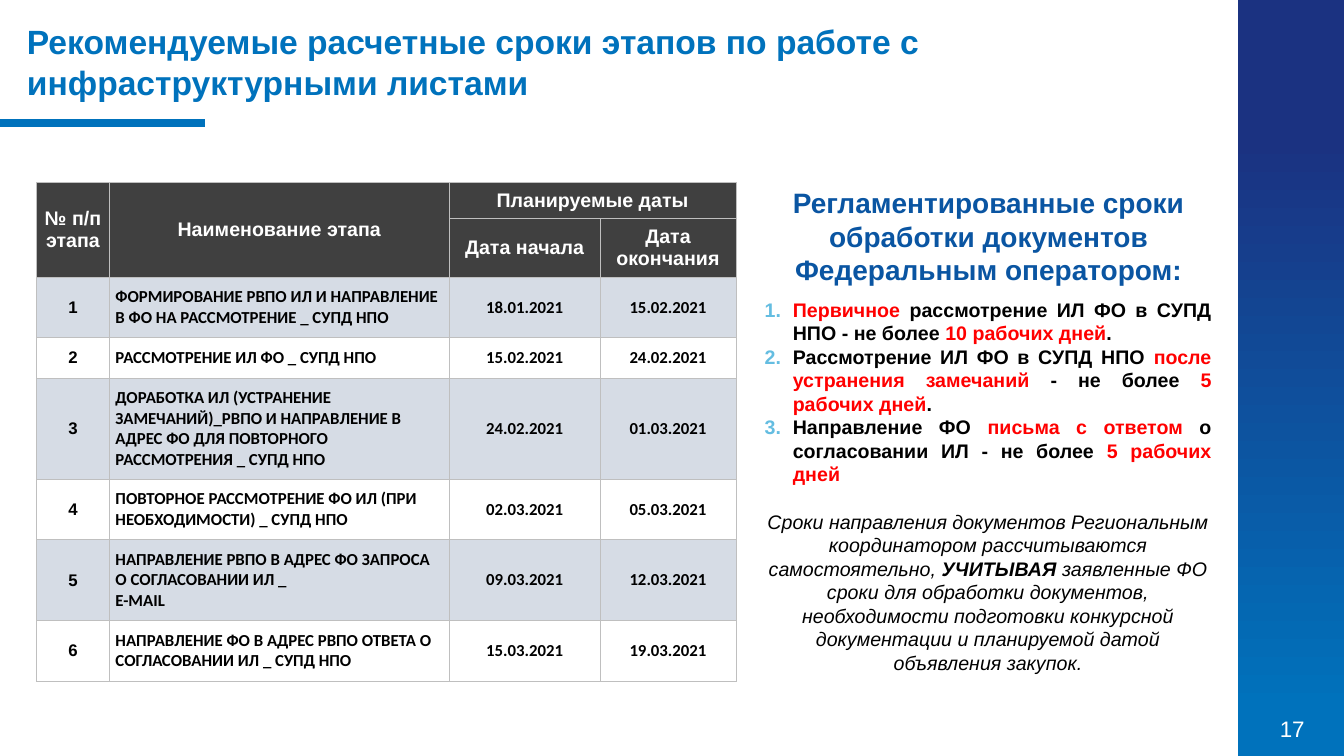
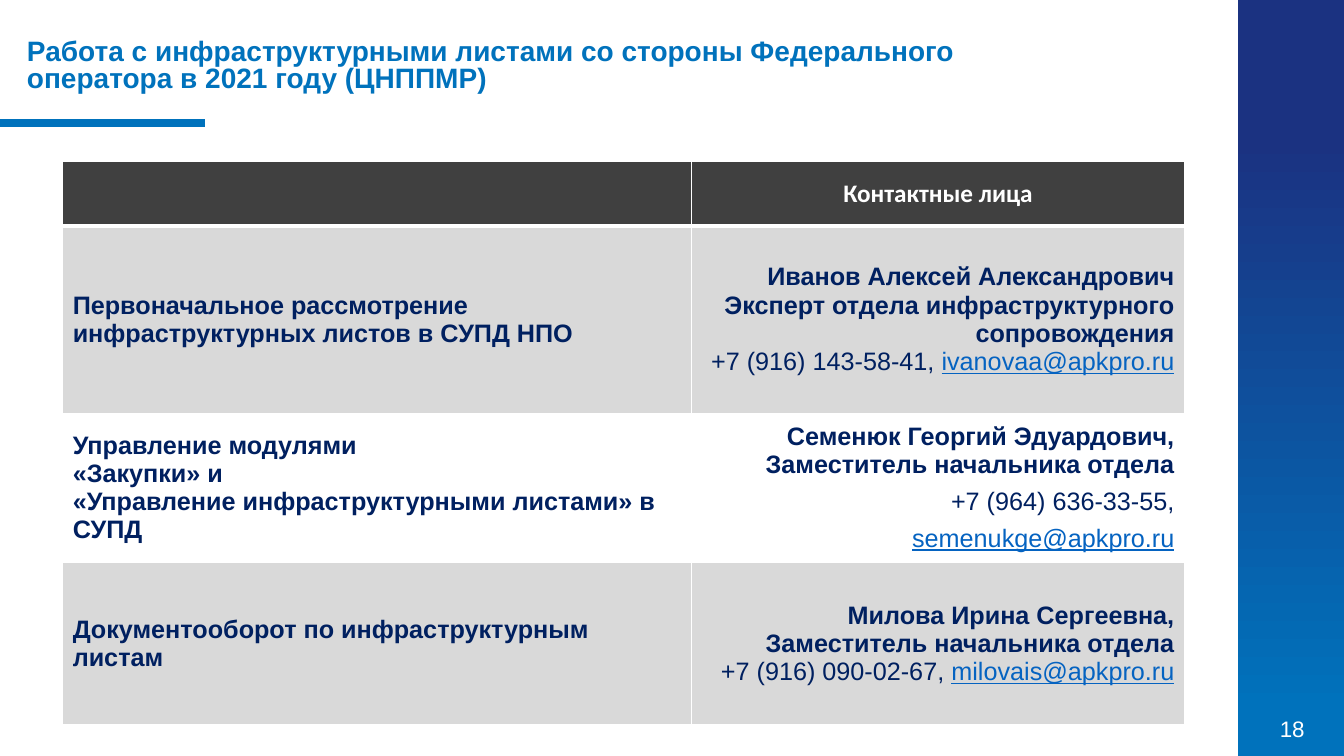
from lxml.etree import SubElement
from pptx import Presentation
from pptx.dml.color import RGBColor
from pptx.enum.shapes import MSO_CONNECTOR, MSO_SHAPE
from pptx.enum.text import MSO_ANCHOR, PP_ALIGN
from pptx.oxml import parse_xml
from pptx.oxml.ns import nsdecls, qn
from pptx.util import Cm, Pt

BLUE = RGBColor(0x00, 0x72, 0xBC)
INDIGO = RGBColor(0x1B, 0x32, 0x81)
HEADING_BLUE = RGBColor(0x0A, 0x55, 0xA2)
NAVY = RGBColor(0x00, 0x20, 0x60)
MAIL_BLUE = RGBColor(0x05, 0x63, 0xC1)
SKY = RGBColor(0x64, 0xBD, 0xE1)
RED = RGBColor(0xFF, 0x00, 0x00)
BLACK = RGBColor(0x00, 0x00, 0x00)
WHITE = RGBColor(0xFF, 0xFF, 0xFF)
CHARCOAL = RGBColor(0x40, 0x40, 0x40)
STEEL = RGBColor(0xD6, 0xDC, 0xE5)
SILVER = RGBColor(0xD9, 0xD9, 0xD9)
GRID = RGBColor(0xBF, 0xBF, 0xBF)


def write_text(frame, text, size, color, bold=True, align=PP_ALIGN.LEFT, font="Arial"):
    """Fill a frame: each line is a paragraph, "|" starts a new run."""
    frame.word_wrap = True
    frame.text = text.replace("|", "")
    for para, line in zip(frame.paragraphs, text.split("\n")):
        para.alignment = align
        pieces = line.split("|")
        para.runs[0].text = pieces[0]
        for piece in pieces[1:]:
            para.add_run().text = piece
        for span in para.runs:
            span.font.name = font
            span.font.size = Pt(size)
            span.font.bold = bold
            span.font.color.rgb = color


def style_cell(cell, fill, border, widths):
    """Set fill and borders; widths are points for left, right, top, bottom."""
    cell.vertical_anchor = MSO_ANCHOR.MIDDLE
    cell.fill.solid()
    cell.fill.fore_color.rgb = fill
    properties = cell._tc.get_or_add_tcPr()
    for position, (side, width) in enumerate(zip("LRTB", widths)):
        properties.insert(position, parse_xml(
            f'<a:ln{side} {nsdecls("a")} w="{Pt(width)}"><a:solidFill>'
            f'<a:srgbClr val="{border}"/></a:solidFill></a:ln{side}>'))


deck = Presentation()
deck.slide_width = Cm(33.87)
deck.slide_height = Cm(19.05)

# Shared frame: side band, page number, rule and title
titles = [
    (17, "Рекомендуемые расчетные сроки этапов по работе с инфраструктурными листами", 24, 0.41, 1),
    (18, "Работа с инфраструктурными листами со стороны Федерального оператора в 2021 году (ЦНППМР)",
     20, 0.89, 0.8),
]
pages = []
for number, title, size, top, spacing in titles:
    page = deck.slides.add_slide(deck.slide_layouts[6])
    pages.append(page)

    band = page.shapes.add_shape(MSO_SHAPE.RECTANGLE, Cm(31.2), 0, Cm(2.67), deck.slide_height)
    band.shadow.inherit = False
    band.line.fill.background()
    band.fill.gradient()
    band.fill.gradient_angle = 90
    for stop, color, position in zip(band.fill.gradient_stops, (BLUE, INDIGO), (0.06, 0.82)):
        stop.color.rgb = color
        stop.position = position

    number_box = page.shapes.add_textbox(Cm(31.55), Cm(17.83), Cm(2.03), Cm(1.04))
    number_box.text_frame.vertical_anchor = MSO_ANCHOR.MIDDLE
    write_text(number_box.text_frame, str(number), 16, WHITE, False, PP_ALIGN.CENTER)

    rule = page.shapes.add_connector(MSO_CONNECTOR.STRAIGHT, 0, Cm(3.1), Cm(5.16), Cm(3.1))
    rule.line.color.rgb = BLUE
    rule.line.width = Pt(6)
    SubElement(rule._element.spPr, qn("a:effectLst"))

    title_box = page.shapes.add_textbox(Cm(0.43), Cm(top), Cm(24.8), Cm(2))
    write_text(title_box.text_frame, title, size, BLUE)
    title_box.text_frame.paragraphs[0].line_spacing = spacing

schedule_page, contacts_page = pages

# Schedule table
stages = [
    ("ФОРМИРОВАНИЕ РВПО ИЛ И НАПРАВЛЕНИЕ В ФО НА РАССМОТРЕНИЕ _ СУПД НПО", "18.01.2021", "15.02.2021"),
    ("РАССМОТРЕНИЕ ИЛ ФО _ СУПД НПО", "15.02.2021", "24.02.2021"),
    ("ДОРАБОТКА ИЛ (УСТРАНЕНИЕ ЗАМЕЧАНИЙ)_РВПО И НАПРАВЛЕНИЕ В АДРЕС ФО ДЛЯ ПОВТОРНОГО "
     "РАССМОТРЕНИЯ _ СУПД НПО", "24.02.2021", "01.03.2021"),
    ("ПОВТОРНОЕ РАССМОТРЕНИЕ ФО ИЛ (ПРИ НЕОБХОДИМОСТИ) _ СУПД НПО", "02.03.2021", "05.03.2021"),
    ("НАПРАВЛЕНИЕ РВПО В АДРЕС ФО ЗАПРОСА О СОГЛАСОВАНИИ ИЛ _\nE-MAIL", "09.03.2021", "12.03.2021"),
    ("НАПРАВЛЕНИЕ ФО В АДРЕС РВПО ОТВЕТА О СОГЛАСОВАНИИ ИЛ _ СУПД НПО", "15.03.2021", "19.03.2021"),
]
schedule_rows = [
    ("№ п/п\nэтапа", "Наименование этапа", "Планируемые даты", ""),
    ("", "", "Дата начала", "Дата окончания"),
] + [(str(index), *stage) for index, stage in enumerate(stages, 1)]
column_widths = [1.84, 8.56, 3.8, 3.43]
row_heights = [0.91, 1.47, 1.53, 1.02, 2.54, 1.53, 2.04, 1.53]
schedule = schedule_page.shapes.add_table(
    len(row_heights), len(column_widths), Cm(0.92), Cm(4.6),
    Cm(sum(column_widths)), Cm(sum(row_heights))).table
schedule.horz_banding = False
for column, width in zip(schedule.columns, column_widths):
    column.width = Cm(width)
for row_index, (row, height, texts) in enumerate(zip(schedule.rows, row_heights, schedule_rows)):
    row.height = Cm(height)
    is_header = row_index < 2
    fill = CHARCOAL if is_header else (WHITE if row_index % 2 else STEEL)
    for column_index, (cell, text) in enumerate(zip(row.cells, texts)):
        style_cell(cell, fill, GRID, [0.5] * 4)
        is_date = column_index > 1 and not is_header
        cell.margin_left = cell.margin_right = Cm(0.03 if is_date else 0.15)
        cell.margin_top = cell.margin_bottom = 0
        if text:
            write_text(cell.text_frame, text, 14 if is_header else 12, WHITE if is_header else BLACK,
                       align=PP_ALIGN.LEFT if column_index == 1 and not is_header else PP_ALIGN.CENTER,
                       font="Arial" if is_header or column_index == 0 else "Calibri")
for first, last in [((0, 0), (1, 0)), ((0, 1), (1, 1)), ((0, 2), (0, 3))]:
    schedule.cell(*first).merge(schedule.cell(*last))

# Operator deadlines
heading_box = schedule_page.shapes.add_textbox(Cm(18.54), Cm(4.55), Cm(12.75), Cm(2.82))
write_text(heading_box.text_frame, "Регламентированные сроки обработки документов Федеральным оператором:",
           20, HEADING_BLUE, align=PP_ALIGN.CENTER)

deadlines_box = schedule_page.shapes.add_textbox(Cm(19.02), Cm(7.37), Cm(11.76), Cm(9.83))
write_text(
    deadlines_box.text_frame,
    "|Первичное| рассмотрение ИЛ ФО в СУПД НПО - не более |10 рабочих дней|.\n"
    "Рассмотрение ИЛ ФО в СУПД НПО |после устранения замечаний| - не более |5 рабочих дней|.\n"
    "Направление ФО |письма с ответом |о согласовании ИЛ - не более |5 рабочих дней\n"
    "Сроки направления документов Региональным координатором рассчитываются самостоятельно, "
    "|УЧИТЫВАЯ |заявленные ФО сроки для обработки документов, необходимости подготовки "
    "конкурсной документации и планируемой датой объявления закупок.",
    14, BLACK, align=PP_ALIGN.JUSTIFY)
*deadlines, note = deadlines_box.text_frame.paragraphs
for para in deadlines:
    properties = para._p.get_or_add_pPr()
    properties.set("marL", str(Cm(0.71)))
    properties.set("indent", str(Cm(-0.71)))
    bullet_color = SubElement(properties, qn("a:buClr"))
    SubElement(bullet_color, qn("a:srgbClr"), val=str(SKY))
    SubElement(properties, qn("a:buAutoNum"), type="arabicPeriod")
    for span in para.runs[1::2]:
        span.font.color.rgb = RED
note.alignment = PP_ALIGN.CENTER
note.space_before = Pt(17)
for index, span in enumerate(note.runs):
    span.font.italic = True
    span.font.bold = index == 1

# Contacts table: the last line of each contact holds phone and mail
contact_rows = [
    ("", "Контактные лица"),
    ("Первоначальное рассмотрение инфраструктурных листов в СУПД НПО",
     "Иванов Алексей Александрович\nЭксперт отдела инфраструктурного сопровождения\n"
     "+7 (916) 143-58-41, |ivanovaa@apkpro.ru"),
    ("Управление модулями\n«Закупки» и\n«Управление инфраструктурными листами» в СУПД",
     "Семенюк Георгий Эдуардович,\nЗаместитель начальника отдела\n"
     "+7 (964) 636-33-55, |semenukge@apkpro.ru"),
    ("Документооборот по инфраструктурным листам",
     "Милова Ирина Сергеевна,\nЗаместитель начальника отдела\n"
     "+7 (916) 090-02-67, |milovais@apkpro.ru"),
]
column_widths = [15.85, 12.42]
row_heights = [1.63, 4.72, 3.76, 4.09]
contacts = contacts_page.shapes.add_table(
    len(row_heights), len(column_widths), Cm(1.58), Cm(4.06),
    Cm(sum(column_widths)), Cm(sum(row_heights))).table
contacts.horz_banding = False
for column, width in zip(contacts.columns, column_widths):
    column.width = Cm(width)
for row_index, (row, height, texts) in enumerate(zip(contacts.rows, row_heights, contact_rows)):
    row.height = Cm(height)
    fill = (CHARCOAL, SILVER, WHITE, SILVER)[row_index]
    top_width, bottom_width = 3 if row_index == 1 else 1, 3 if row_index == 0 else 1
    for cell in row.cells:
        style_cell(cell, fill, WHITE, [1, 1, top_width, bottom_width])
    task_cell, contact_cell = row.cells
    if row_index == 0:
        write_text(contact_cell.text_frame, texts[1], 18, WHITE, align=PP_ALIGN.CENTER, font="Calibri")
        continue
    write_text(task_cell.text_frame, texts[0], 18, NAVY)
    write_text(contact_cell.text_frame, texts[1], 18, NAVY, align=PP_ALIGN.RIGHT)
    phone, mail = contact_cell.text_frame.paragraphs[-1].runs
    phone.font.bold = mail.font.bold = False
    mail.font.underline = True
    mail.font.color.rgb = MAIL_BLUE
contacts.cell(2, 1).text_frame.paragraphs[-1].line_spacing = 1.3

deck.save("out.pptx")
